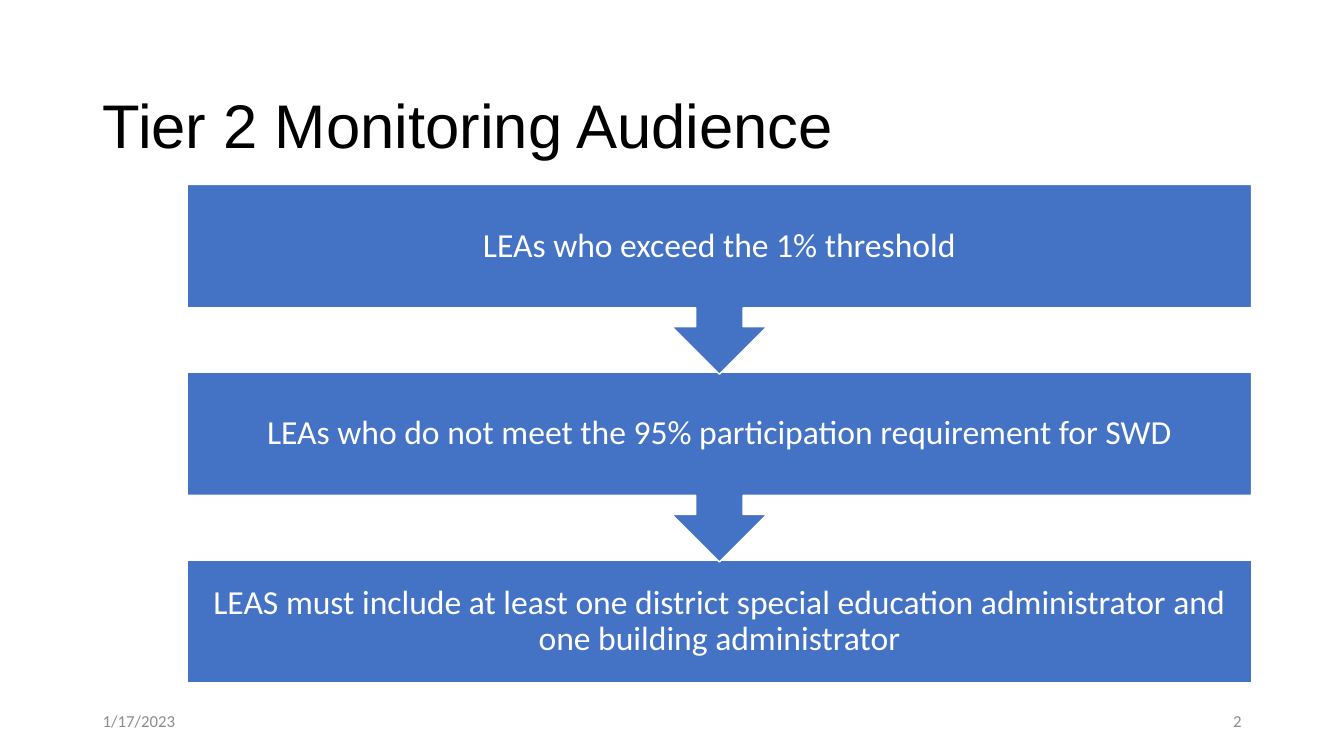
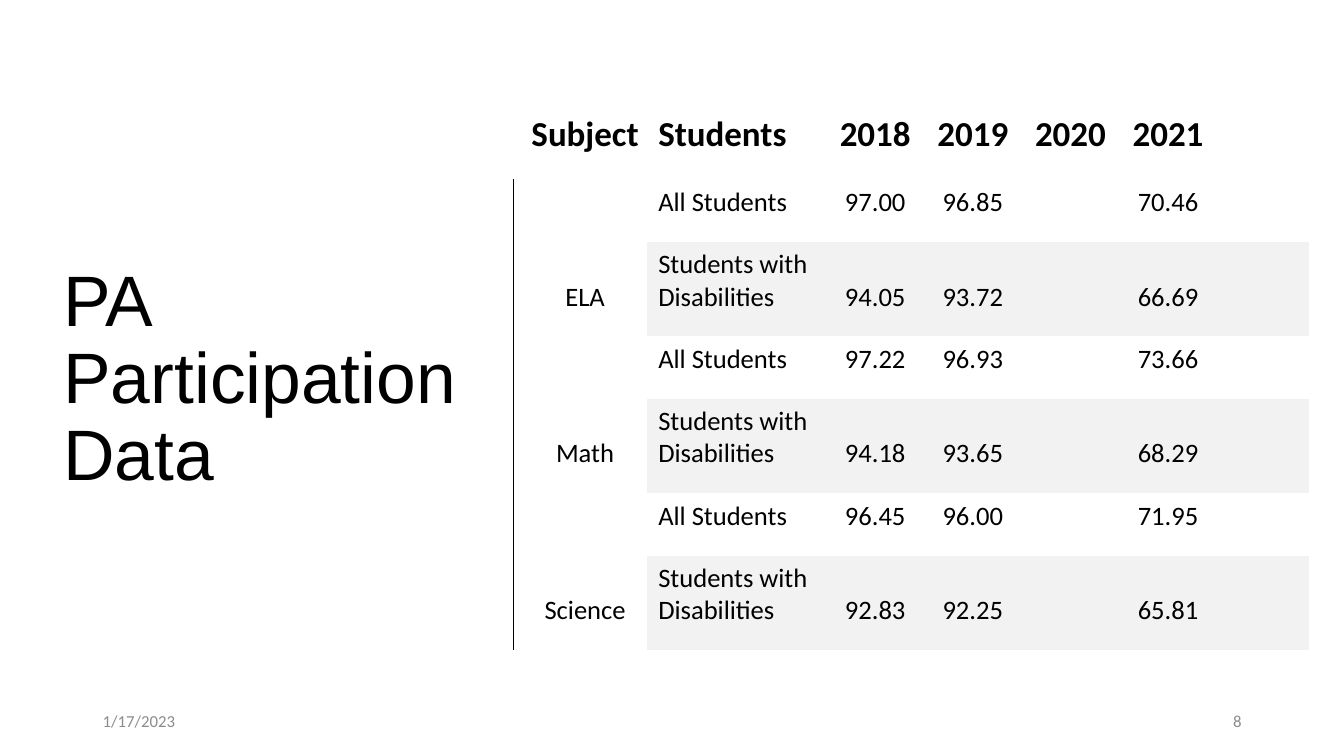
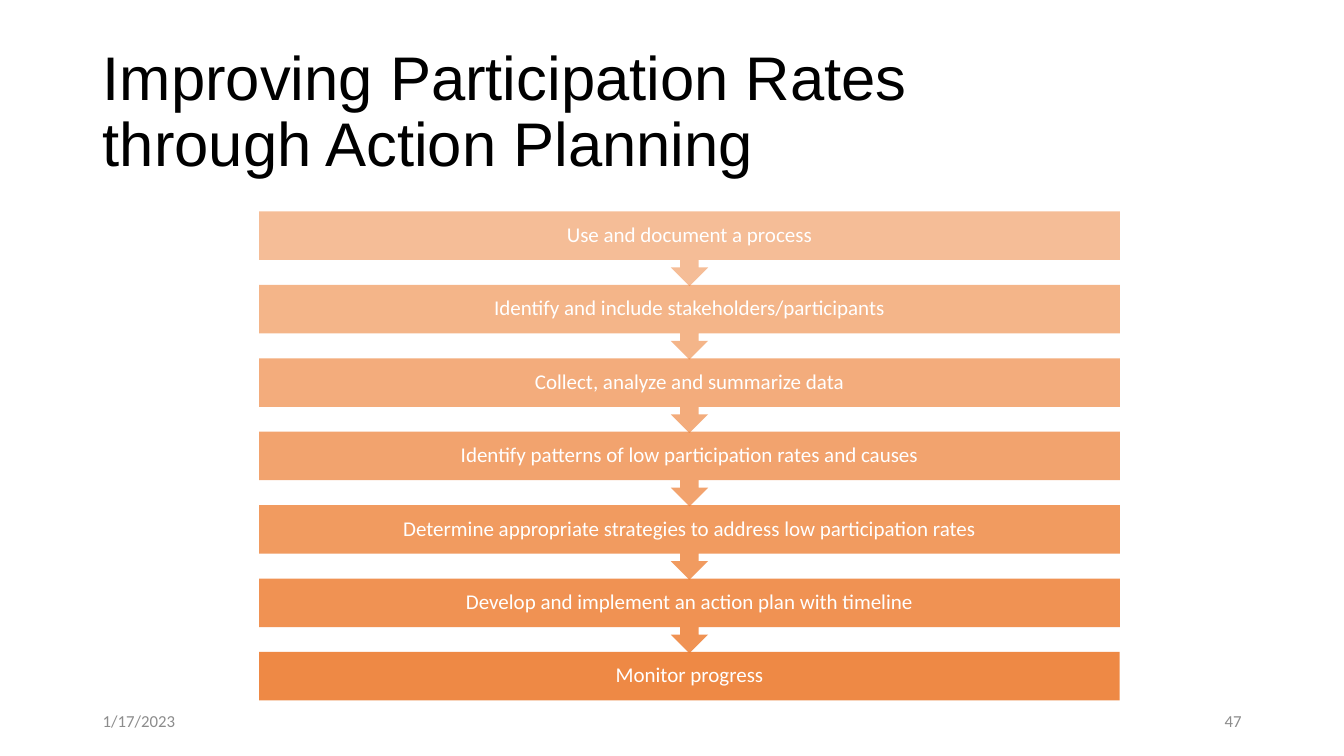
from lxml import etree
from pptx import Presentation
from pptx import util as u
from pptx.dml.color import RGBColor
from pptx.enum import shapes, text
from pptx.oxml.ns import qn

COLORS = {
    "black": "000000",
    "white": "FFFFFF",
    "footer": "8C8C8C",
    "blue": "4472C4",
    "orange": "ED7D31",
    "band": "F2F2F2",
}
TITLE_FONT = "Arial"
BODY_FONT = "Calibri"
PLAIN_TABLE_STYLE = "{2D5ABB26-0587-4C30-8999-92F81FD0307C}"
LEFT, CENTER, RIGHT = text.PP_ALIGN.LEFT, text.PP_ALIGN.CENTER, text.PP_ALIGN.RIGHT
TOP_TO_BOTTOM = shapes.MSO_SHAPE.DOWN_ARROW_CALLOUT
BOX = shapes.MSO_SHAPE.RECTANGLE
MIDDLE, BOTTOM = text.MSO_ANCHOR.MIDDLE, text.MSO_ANCHOR.BOTTOM


def color(name):
    return RGBColor.from_string(COLORS[name])


class Deck:
    def __init__(self):
        self.presentation = Presentation()
        self.presentation.slide_width = u.Cm(33.87)
        self.presentation.slide_height = u.Cm(19.05)
        self.slide = None

    def new_slide(self, number):
        self.slide = self.presentation.slides.add_slide(self.presentation.slide_layouts[6])
        self.text_box("1/17/2023", (2.34, 17.65, 7.62, 1.02), 12, "footer")
        self.text_box(str(number), (23.92, 17.65, 7.62, 1.02), 12, "footer", align=RIGHT)

    def set_text(self, frame, content, size, color_name, font=BODY_FONT, align=LEFT,
                 spacing=1.0, bold=False):
        paragraph = frame.paragraphs[0]
        paragraph.text = content
        paragraph.alignment = align
        paragraph.line_spacing = spacing
        paragraph.font.name = font
        paragraph.font.size = u.Pt(size)
        paragraph.font.bold = bold
        paragraph.font.color.rgb = color(color_name)

    def text_box(self, content, place, size, color_name, anchor=MIDDLE, **style):
        frame = self.slide.shapes.add_textbox(*map(u.Cm, place)).text_frame
        frame.word_wrap = True
        frame.vertical_anchor = anchor
        self.set_text(frame, content, size, color_name, **style)

    def title(self, content, place, size=44, anchor=MIDDLE):
        self.text_box(content, place, size, "black", anchor, font=TITLE_FONT, spacing=0.9)

    def step(self, preset, content, place, size, inset, fill, opacity, outlined):
        shape = self.slide.shapes.add_shape(preset, *map(u.Cm, place))
        shape.shadow.inherit = False
        shape.fill.solid()
        shape.fill.fore_color.rgb = color(fill)
        if opacity < 100:
            fill_color = shape._element.spPr.find(".//" + qn("a:srgbClr"))
            etree.SubElement(fill_color, qn("a:alpha"), val=str(round(opacity * 1000)))
        if outlined:
            shape.line.color.rgb = color("white")
            shape.line.width = u.Pt(1)
        else:
            shape.line.fill.background()
        frame = shape.text_frame
        frame.word_wrap = True
        frame.vertical_anchor = MIDDLE
        frame.margin_left = frame.margin_right = u.Cm(inset)
        frame.margin_top = frame.margin_bottom = u.Cm(inset)
        self.set_text(frame, content, size, "white", align=CENTER, spacing=0.9)

    def process(self, steps, left, top, width, pitch, box_height, callout_height,
                size, inset, fill, opacities=(100, 100), outlined=False):
        last = len(steps) - 1
        first_opacity, last_opacity = opacities
        for index in range(last, -1, -1):
            preset, height = (BOX, box_height) if index == last else (TOP_TO_BOTTOM, callout_height)
            opacity = first_opacity + (last_opacity - first_opacity) * index / last
            self.step(preset, steps[index], (left, top + index * pitch, width, height),
                      size, inset, fill, opacity, outlined)

    def cell(self, cell, content, size, align, bold, fill):
        cell.margin_left, cell.margin_top = u.Cm(0.28), u.Cm(0.08)
        cell.margin_right, cell.margin_bottom = u.Cm(0.03), u.Cm(0.58)
        cell.vertical_anchor = BOTTOM
        if fill:
            cell.fill.solid()
            cell.fill.fore_color.rgb = color(fill)
        else:
            cell.fill.background()
        self.set_text(cell.text_frame, content, size, "black", align=align, bold=bold)

    def left_border(self, cell):
        line = etree.Element(qn("a:lnL"), w=str(u.Pt(0.75)))
        solid = etree.SubElement(line, qn("a:solidFill"))
        etree.SubElement(solid, qn("a:srgbClr"), val=COLORS["black"])
        cell._tc.get_or_add_tcPr().insert(0, line)

    def table(self, rows, left, top, widths, heights):
        frame = self.slide.shapes.add_table(
            len(rows), len(widths), u.Cm(left), u.Cm(top), u.Cm(sum(widths)), u.Cm(sum(heights)))
        table = frame.table
        table.first_row = table.horz_banding = False
        table._tbl.tblPr.find(qn("a:tableStyleId")).text = PLAIN_TABLE_STYLE
        for column, width in zip(table.columns, widths):
            column.width = u.Cm(width)
        for row_index, (row, height) in enumerate(zip(rows, heights)):
            table.rows[row_index].height = u.Cm(height)
            header = row_index == 0
            shaded = not header and row_index % 2 == 0
            for column_index, content in enumerate(row):
                self.cell(table.cell(row_index, column_index), content,
                          25 if header else 19,
                          LEFT if column_index == 1 else CENTER, header,
                          "band" if shaded and column_index else None)
            if not header:
                self.left_border(table.cell(row_index, 0))
        for row_index in range(1, len(rows), 2):
            table.cell(row_index, 0).merge(table.cell(row_index + 1, 0))


def main():
    deck = Deck()

    deck.new_slide(2)
    deck.title("Tier 2 Monitoring Audience", (2.34, 1.4, 29.21, 3.68))
    deck.process(
        ["LEAs who exceed the 1% threshold",
         "LEAs who do not meet the 95% participation requirement for SWD",
         "LEAS must include at least one district special education administrator"
         " and one building administrator"],
        left=4.72, top=4.65, width=26.82, pitch=4.73, box_height=3.1, callout_height=4.78,
        size=24, inset=0.48, fill="blue", outlined=True)

    deck.new_slide(8)
    deck.title("PA Participation Data", (1.35, 2.69, 10.62, 9.93), 51, BOTTOM)
    participation = {
        "ELA": [("97.00", "96.85", "70.46"), ("94.05", "93.72", "66.69")],
        "Math": [("97.22", "96.93", "73.66"), ("94.18", "93.65", "68.29")],
        "Science": [("96.45", "96.00", "71.95"), ("92.83", "92.25", "65.81")],
    }
    rows = [["Subject", "Students", "2018", "2019", "2020", "2021", ""]]
    for subject, (everyone, disabilities) in participation.items():
        for name, group, (first, second, latest) in (
                (subject, "All Students", everyone),
                ("", "Students with Disabilities", disabilities)):
            rows.append([name, group, first, second, "", latest, ""])
    deck.table(rows, 12.93, 2.69, [3.38, 4.39] + [2.46] * 5, [1.83] + [1.58, 2.37] * 3)

    deck.new_slide(47)
    deck.title("Improving Participation Rates\vthrough Action Planning", (2.34, 1.02, 29.21, 3.68))
    deck.process(
        ["Use and document a process",
         "Identify and include stakeholders/participants",
         "Collect, analyze and summarize data",
         "Identify patterns of low participation rates and causes",
         "Determine appropriate strategies to address low participation rates",
         "Develop and implement an action plan with timeline",
         "Monitor progress"],
        left=6.53, top=5.33, width=21.69, pitch=1.85, box_height=1.22, callout_height=1.88,
        size=15, inset=0.3, fill="orange", opacities=(50, 90))

    deck.presentation.save("out.pptx")


if __name__ == "__main__":
    main()
